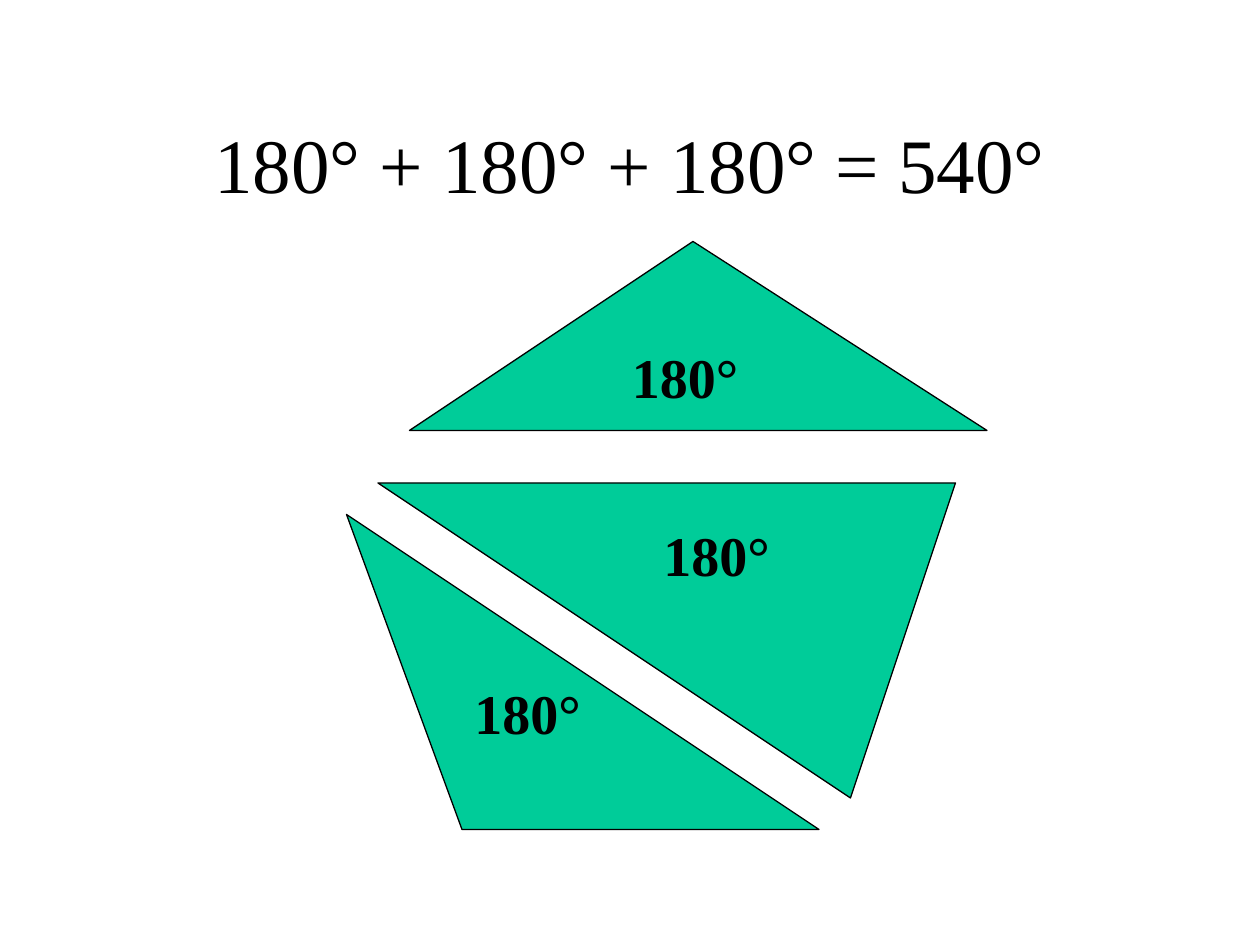
"""Build a slide that sums the angles of a pentagon from its three triangles."""
from typing import NamedTuple

from lxml.etree import SubElement
from pptx import Presentation
from pptx.dml.color import RGBColor
from pptx.enum.text import MSO_ANCHOR, MSO_AUTO_SIZE, PP_ALIGN
from pptx.oxml.ns import qn
from pptx.slide import Slide
from pptx.text.text import _Paragraph
from pptx.util import Pt

PX = 7620
GREEN = RGBColor(0x00, 0xCC, 0x99)
BLACK = RGBColor(0x00, 0x00, 0x00)
WHITE = RGBColor(0xFF, 0xFF, 0xFF)
FONT = "Times New Roman"


class Box(NamedTuple):
    left: int
    top: int
    width: int
    height: int


class Triangle(NamedTuple):
    corners: tuple[tuple[int, int], ...]
    label: Box


TRIANGLES = (
    Triangle(((390, 410), (940, 410), (660, 230)), Box(590, 320, 130, 75)),
    Triangle(((360, 460), (910, 460), (810, 760)), Box(620, 490, 170, 75)),
    Triangle(((330, 490), (440, 790), (780, 790)), Box(440, 640, 140, 75)),
)


def draw_text(slide: Slide, box: Box, words: str, frame_format: dict, font_format: dict) -> _Paragraph:
    """Place a one-line text and return its paragraph."""
    frame = slide.shapes.add_textbox(*(length * PX for length in box)).text_frame
    for name, value in {"word_wrap": True, **frame_format}.items():
        setattr(frame, name, value)
    line = frame.paragraphs[0]
    run = line.add_run()
    run.text = words
    for name, value in {"name": FONT, **font_format}.items():
        setattr(run.font, name, value)
    run.font.color.rgb = BLACK
    return line


def draw_triangle(slide: Slide, triangle: Triangle) -> None:
    """Draw a filled triangle and its angle sum."""
    start, *others = triangle.corners
    builder = slide.shapes.build_freeform(*start, scale=PX)
    builder.add_line_segments(others, close=True)
    outline = builder.convert_to_shape()
    outline.shadow.inherit = False
    outline.fill.solid()
    outline.fill.fore_color.rgb = GREEN
    outline.line.color.rgb = BLACK
    outline.line.width = Pt(0.75)
    angle_sum = draw_text(
        slide, triangle.label, "180°",
        {"auto_size": MSO_AUTO_SIZE.SHAPE_TO_FIT_TEXT},
        {"size": Pt(32), "bold": True},
    )
    spacing = SubElement(angle_sum._p.get_or_add_pPr(), qn("a:spcBef"))
    SubElement(spacing, qn("a:spcPct"), val="50000")


def main() -> None:
    """Build and save the slide."""
    deck = Presentation()
    deck.slide_width, deck.slide_height = 1200 * PX, 900 * PX
    slide = deck.slides.add_slide(deck.slide_layouts[6])
    slide.background.fill.solid()
    slide.background.fill.fore_color.rgb = WHITE
    equation = draw_text(
        slide, Box(90, 80, 1020, 150), "180° + 180° + 180° = 540°",
        {"vertical_anchor": MSO_ANCHOR.MIDDLE}, {"size": Pt(44)},
    )
    equation.alignment = PP_ALIGN.CENTER
    for triangle in TRIANGLES:
        draw_triangle(slide, triangle)
    deck.save("out.pptx")


if __name__ == "__main__":
    main()
